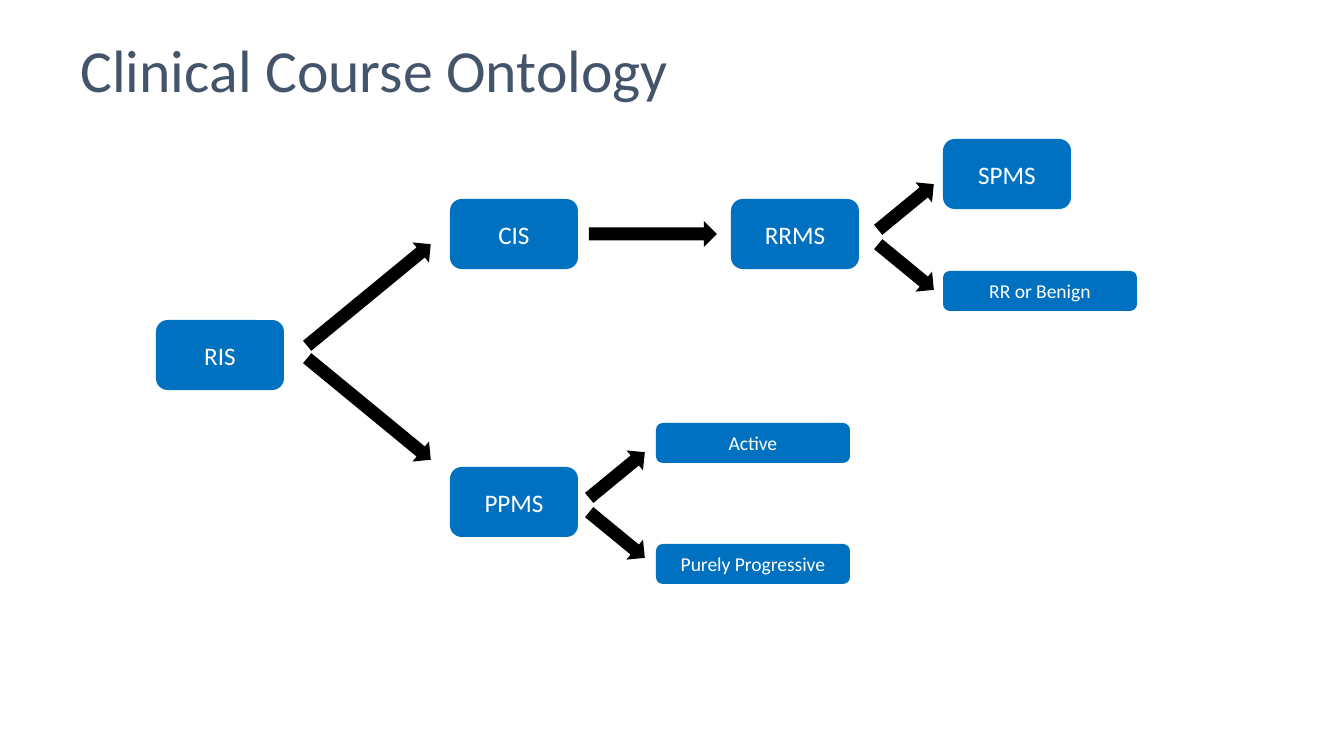
from dataclasses import dataclass

from pptx import Presentation
from pptx.dml.color import RGBColor
from pptx.enum.shapes import MSO_SHAPE
from pptx.enum.text import MSO_ANCHOR, MSO_AUTO_SIZE, PP_ALIGN
from pptx.shapes.autoshape import Shape
from pptx.shapes.shapetree import GroupShapes
from pptx.util import Pt

PX = 6804  # EMU in one px
FONT = "Calibri"
BLUE = RGBColor(0x00, 0x70, 0xC0)
BLACK = RGBColor(0x00, 0x00, 0x00)
WHITE = RGBColor(0xFF, 0xFF, 0xFF)
SLATE = RGBColor(0x44, 0x54, 0x6A)
ROUNDED = MSO_SHAPE.ROUNDED_RECTANGLE
ARROW = MSO_SHAPE.RIGHT_ARROW
CENTER, LEFT = PP_ALIGN.CENTER, PP_ALIGN.LEFT
MIDDLE = MSO_ANCHOR.MIDDLE
NO_AUTOFIT = MSO_AUTO_SIZE.NONE

ARROW_HEIGHT = 26
FORK_ANGLE = 39.4


@dataclass(frozen=True)
class BoxStyle:
    width: int
    height: int
    font_size: float


@dataclass(frozen=True)
class Stage:
    label: str
    left: int
    top: int
    style: BoxStyle


@dataclass(frozen=True)
class Fork:
    """A pair of arrows spreading up and down from a centre line."""
    center_x: int
    center_y: int
    spread: int
    length: int


COURSE = BoxStyle(128, 70, 13.5)
SUBTYPE = BoxStyle(194, 40, 10.5)

STAGES = [
    Stage("RIS", 156, 320, COURSE),
    Stage("CIS", 450, 199, COURSE),
    Stage("PPMS", 450, 467, COURSE),
    Stage("RRMS", 731, 199, COURSE),
    Stage("SPMS", 943, 139, COURSE),
    Stage("RR or Benign", 943, 271, SUBTYPE),
    Stage("Active", 656, 423, SUBTYPE),
    Stage("Purely Progressive", 656, 544, SUBTYPE),
]
FORKS = [
    Fork(369, 352, 57, 160),
    Fork(906, 237, 30, 72),
    Fork(617, 505, 30, 72),
]


def format_text(shape: Shape, size: float, color: RGBColor,
                alignment: PP_ALIGN) -> None:
    frame = shape.text_frame
    frame.word_wrap = True
    frame.vertical_anchor = MIDDLE
    para = frame.paragraphs[0]
    para.alignment = alignment
    for span in para.runs:
        span.font.name = FONT
        span.font.size = Pt(size)
        span.font.color.rgb = color


def add_filled(shapes: GroupShapes, kind: MSO_SHAPE, left: int, top: int,
               width: int, height: int, color: RGBColor) -> Shape:
    shape = shapes.add_shape(kind, left * PX, top * PX, width * PX, height * PX)
    shape.shadow.inherit = False
    shape.fill.solid()
    shape.fill.fore_color.rgb = color
    shape.line.fill.background()
    return shape


def add_stage(shapes: GroupShapes, stage: Stage) -> None:
    style = stage.style
    box = add_filled(shapes, ROUNDED, stage.left, stage.top,
                     style.width, style.height, BLUE)
    box.text_frame.text = stage.label
    format_text(box, style.font_size, WHITE, CENTER)


def add_arrow(shapes: GroupShapes, center_x: int, center_y: int,
              length: int, angle: float = 0) -> None:
    arrow = add_filled(shapes, ARROW, center_x - length // 2,
                       center_y - ARROW_HEIGHT // 2, length, ARROW_HEIGHT, BLACK)
    arrow.rotation = angle


def add_fork(shapes: GroupShapes, fork: Fork) -> None:
    for side in (-1, 1):
        add_arrow(shapes, fork.center_x, fork.center_y + side * fork.spread,
                  fork.length, side * FORK_ANGLE % 360)


def main() -> None:
    deck = Presentation()
    deck.slide_width, deck.slide_height = 1344 * PX, 756 * PX
    page = deck.slides.add_slide(deck.slide_layouts[5])

    # Title
    title = page.shapes.title
    title.left, title.top = 67 * PX, 9 * PX
    title.width, title.height = 1210 * PX, 128 * PX
    title.text_frame.text = "Clinical Course Ontology"
    title.text_frame.auto_size = NO_AUTOFIT
    title.text_frame.paragraphs[0].line_spacing = 0.9
    format_text(title, 32, SLATE, LEFT)

    # Disease course tree
    tree = page.shapes.add_group_shape().shapes
    for stage in STAGES:
        add_stage(tree, stage)
    for fork in FORKS:
        add_fork(tree, fork)
    add_arrow(tree, 653, 234, 128)  # CIS to RRMS

    deck.save("out.pptx")


if __name__ == "__main__":
    main()
